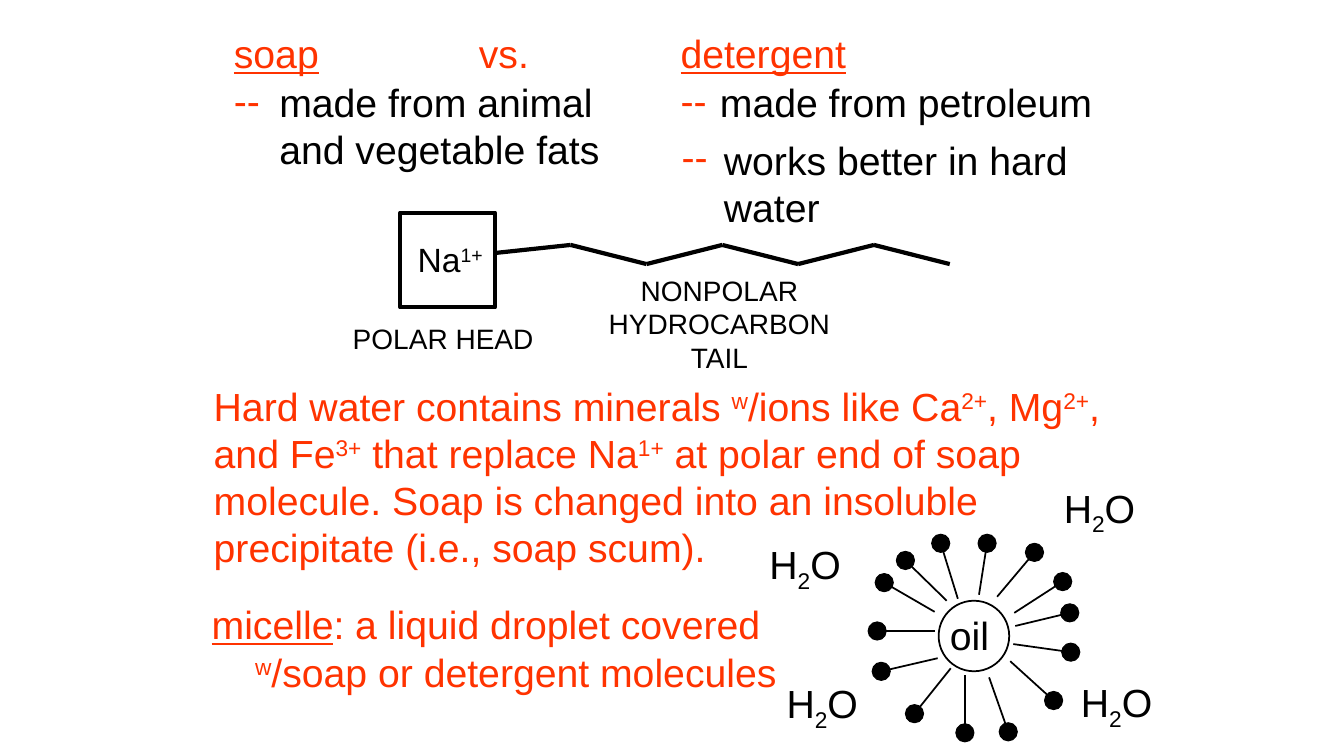
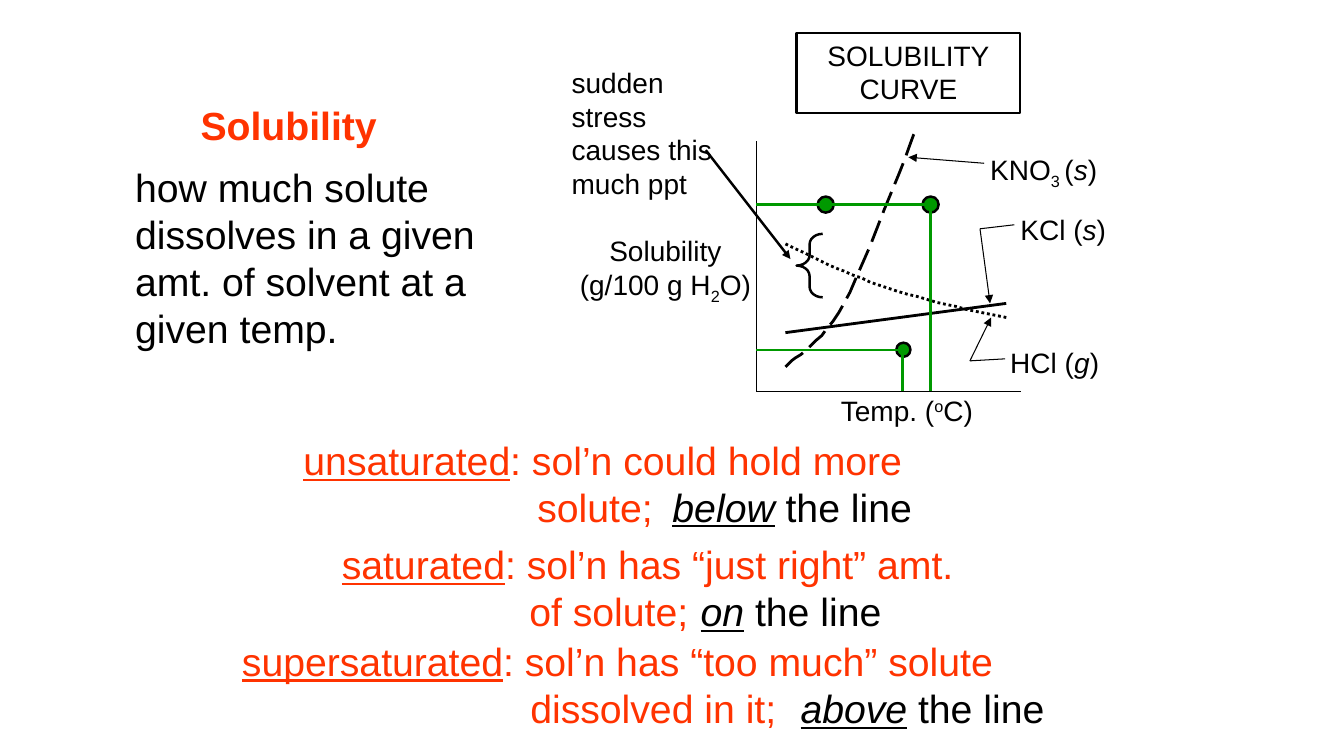
from itertools import pairwise

from lxml import etree
from pptx import Presentation
from pptx import util as u
from pptx.dml.color import RGBColor
from pptx.enum import dml, shapes, text
from pptx.oxml.ns import qn

# Shared look; all lengths are px, 100 to the inch
PX = 9144
SIZE = 1333, 750
FONT = "Arial"
RED, BLACK, WHITE, GREEN = "FF3300", "000000", "FFFFFF", "009900"
BIG, MEDIUM, SMALL = 28, 24, 20
LEFT, CENTER = text.PP_ALIGN.LEFT, text.PP_ALIGN.CENTER
BASELINES = {"^": "30000", "_": "-25000"}

# A run is plain text or (text, marks): ^ raised, _ lowered, u underlined, i italic
WATER = ["H", ("2", "_"), "O"]

# Slide 1: (x, y, width, colour, lines)
SOAP_TEXTS = [
    (232, 29, 120, RED, [[("soap", "u")]]),
    (475, 29, 80, RED, ["vs."]),
    (675, 29, 190, RED, [[("detergent", "u")]]),
    (232, 76, 40, RED, ["--"]),
    (675, 76, 40, RED, ["--"]),
    (676, 131, 40, RED, ["--"]),
    (277, 78, 349, BLACK, ["made from animal", "and vegetable fats"]),
    (714, 78, 401, BLACK, ["made from petroleum"]),
    (718, 135, 362, BLACK, ["works better in hard", "water"]),
    (212, 379, 914, RED, [
        ["Hard water contains minerals ", ("w", "^"), "/ions like Ca", ("2+", "^"),
         ", Mg", ("2+", "^"), ","],
        ["and Fe", ("3+", "^"), " that replace Na", ("1+", "^"), " at polar end of soap"],
        "molecule. Soap is changed into an insoluble",
        "precipitate (i.e., soap scum).",
    ]),
]
MICELLE = [[("micelle", "u"), ": a liquid droplet covered"],
           [("w", "^"), "/soap or detergent molecules"]]
HEAD_BOX = 397, 211, 94, 94
TAIL_START, TAIL_X, TAIL_STEP, TAIL_KINKS = (491, 251), 566, 75.2, 6
TAIL_HIGH, TAIL_LOW = 243, 262
MOLECULE_LABELS = [  # x, y, width, size, lines
    (583, 271, 261, SMALL, ["NONPOLAR", "HYDROCARBON", "TAIL"]),
    (320, 319, 239, SMALL, ["POLAR HEAD"]),
    (401, 237, 91, MEDIUM, [["Na", ("1+", "^")]]),
]
OIL = 931, 596, 70, 70
OIL_LABEL = 932, 606, 59
WATER_SPOTS = [(752, 536), (1044, 480), (769, 674), (1061, 673)]
KNOB = 18
SOAP_MOLECULES = [  # knob x, y, tail end x, y
    (979, 539, 971, 590), (933, 539, 950, 594), (1026, 548, 989, 592),
    (877, 578, 927, 607), (870, 626, 927, 626), (1045, 695, 1002, 656),
    (898, 556, 939, 596), (874, 666, 930, 653), (907, 708, 943, 663),
    (957, 727, 957, 670), (1000, 726, 981, 672), (1062, 647, 1005, 639),
    (1054, 577, 1006, 608), (1061, 608, 1007, 621),
]

# Slide 2: definitions as (x, y, indent of the second line, term, first, second)
DEFINITIONS = [
    (301, 433, 232, "unsaturated", ": sol’n could hold more", "solute;"),
    (339, 536, 186, "saturated", ": sol’n has “just right” amt.", "of solute;"),
    (240, 632, 286, "supersaturated", ": sol’n has “too much” solute", "dissolved in it;"),
]
PLACES = [(667, 479, "below"), (695, 583, "on"), (794, 679, "above")]
MEANING = ["how much solute", "dissolves in a given", "amt. of solvent at a", "given temp."]
STRESS_NOTE = ["sudden", "stress", "causes this", "much ppt"]
CHART_LABELS = [  # x, y, width, alignment, lines
    (834, 390, 160, LEFT, [["Temp. (", ("o", "^"), "C)"]]),
    (561, 232, 198, CENTER, ["Solubility", ["(g/100 g H", ("2", "_"), "O)"]]),
    (982, 151, 150, LEFT, [["KNO", ("3 ", "_"), "(", ("s", "i"), ")"]]),
    (1012, 211, 120, LEFT, [["KCl (", ("s", "i"), ")"]]),
    (1002, 343, 120, LEFT, [["HCl (", ("g", "i"), ")"]]),
    (567, 65, 160, LEFT, STRESS_NOTE),
]
CHART_TITLE = (790, 33, 222, 79), ["SOLUBILITY", "CURVE"]
AXES = [(750, 140), (750, 388), (1013, 388)]
KCL_LINE = [(779, 330), (998, 301)]
KNO3_CURVE = [(779, 364), (789, 353), (816, 341), (837, 301),
              (859, 261), (898, 152), (910, 126)]
HCL_CURVE = [(779, 242), (812, 258), (845, 274), (881, 286),
             (918, 298), (958, 307), (998, 315)]
LEADERS = [
    [(997, 356), (962, 358), (983, 315)],
    [(1006, 223), (972, 227), (982, 301)],
    [(976, 162), (901, 156)],
]
GUIDES = [[(895, 388), (895, 347), (750, 347)], [(923, 388), (923, 203), (750, 203)]]
SAMPLE_POINTS = [(923, 203, 16), (896, 347, 14), (819, 203, 16)]
STRESS_ARROW = [(700, 149), (784, 257)]
BRACE = 790, 232, 26, 63


def emu(*lengths):
    return [round(v * PX) for v in lengths]


def color(hex_code):
    return RGBColor.from_string(hex_code)


def write(frame, lines, size, hex_code, align=LEFT, indent=0):
    """Fill a frame with one paragraph a line; indent moves all but the first."""
    frame.word_wrap = True
    frame.vertical_anchor = text.MSO_ANCHOR.TOP
    frame.margin_left = frame.margin_right = frame.margin_top = frame.margin_bottom = 0
    for i, line in enumerate(lines):
        para = frame.add_paragraph() if i else frame.paragraphs[0]
        para.alignment = align
        para.font.name, para.font.size = FONT, u.Pt(size)
        para.font.color.rgb = color(hex_code)
        if i and indent:
            para._p.get_or_add_pPr().set("marL", str(indent * PX))
        for part in [line] if isinstance(line, str) else line:
            words, marks = (part, "") if isinstance(part, str) else part
            run = para.add_run()
            run.text = words
            if "u" in marks:
                run.font.underline = True
            if "i" in marks:
                run.font.italic = True
            if marks in BASELINES:
                run._r.get_or_add_rPr().set("baseline", BASELINES[marks])


def add_text(slide, x, y, width, lines, size=BIG, hex_code=BLACK, align=LEFT, indent=0):
    height = len(lines) * size * 1.66
    frame = slide.shapes.add_textbox(*emu(x, y, width, height)).text_frame
    write(frame, lines, size, hex_code, align, indent)
    return frame


def add_outline(slide, kind, box, weight, fill=None):
    shape = slide.shapes.add_shape(kind, *emu(*box))
    shape.shadow.inherit = False
    if fill:
        shape.fill.solid()
        shape.fill.fore_color.rgb = color(fill)
    else:
        shape.fill.background()
    shape.line.color.rgb, shape.line.width = color(BLACK), u.Pt(weight)
    return shape


def add_dot(slide, x, y, size, weight, fill):
    box = x - size / 2, y - size / 2, size, size
    add_outline(slide, shapes.MSO_SHAPE.OVAL, box, weight, fill)


def add_lines(slide, points, weight, hex_code=BLACK, arrow=False):
    """Join the points with straight lines; an arrow sits on the last point."""
    for start, end in pairwise(points):
        link = slide.shapes.add_connector(shapes.MSO_CONNECTOR.STRAIGHT, *emu(*start, *end))
        link.line.color.rgb, link.line.width = color(hex_code), u.Pt(weight)
        etree.SubElement(link._element.spPr, qn("a:effectLst"))
    if arrow:
        etree.SubElement(link.line._get_or_add_ln(), qn("a:tailEnd"), type="triangle")


def add_curve(slide, controls, weight, dash, steps=12):
    """Draw chained cubic Bezier curves as an open outline."""
    points = [controls[0]]
    for i in range(0, len(controls) - 1, 3):
        for step in range(1, steps + 1):
            t = step / steps
            weights = (1 - t) ** 3, 3 * t * (1 - t) ** 2, 3 * t * t * (1 - t), t ** 3
            points.append(tuple(sum(w * p[axis] for w, p in zip(weights, controls[i:i + 4]))
                                for axis in (0, 1)))
    builder = slide.shapes.build_freeform(*points[0], scale=PX)
    builder.add_line_segments(points[1:], close=False)
    curve = builder.convert_to_shape()
    curve.shadow.inherit = False
    curve.fill.background()
    curve.line.color.rgb, curve.line.width = color(BLACK), u.Pt(weight)
    curve.line.dash_style = dash


def soap_slide(slide):
    for x, y, width, hex_code, lines in SOAP_TEXTS:
        add_text(slide, x, y, width, lines, hex_code=hex_code)
    add_text(slide, 210, 596, 600, MICELLE, hex_code=RED, indent=43)

    # Soap molecule: head and zigzag tail
    add_outline(slide, shapes.MSO_SHAPE.RECTANGLE, HEAD_BOX, 3, WHITE)
    kinks = [(TAIL_X + i * TAIL_STEP, TAIL_LOW if i % 2 else TAIL_HIGH)
             for i in range(TAIL_KINKS)]
    add_lines(slide, [TAIL_START] + kinks, 3)
    for x, y, width, size, lines in MOLECULE_LABELS:
        add_text(slide, x, y, width, lines, size, align=CENTER)

    # Micelle around the oil drop
    for x, y, end_x, end_y in SOAP_MOLECULES:
        add_dot(slide, x, y, KNOB, 0.75, BLACK)
        add_lines(slide, [(x, y), (end_x, end_y)], 1.25)
    add_outline(slide, shapes.MSO_SHAPE.OVAL, OIL, 1.25)
    add_text(slide, *OIL_LABEL, ["oil"], align=CENTER)
    for x, y in WATER_SPOTS:
        add_text(slide, x, y, 93, [WATER], align=CENTER)


def solubility_slide(slide):
    heading = add_text(slide, 199, 100, 206, ["Solubility"], hex_code=RED)
    heading.paragraphs[0].font.bold = True
    add_text(slide, 134, 162, 358, MEANING)

    # Solubility curves
    add_lines(slide, AXES, 0.75)
    add_lines(slide, KCL_LINE, 2)
    add_curve(slide, KNO3_CURVE, 2, dml.MSO_LINE.LONG_DASH)
    add_curve(slide, HCL_CURVE, 2, dml.MSO_LINE.ROUND_DOT)
    for leader in LEADERS:
        add_lines(slide, leader, 0.75, arrow=True)
    title_box, title_lines = CHART_TITLE
    title = add_outline(slide, shapes.MSO_SHAPE.RECTANGLE, title_box, 1.5, WHITE)
    write(title.text_frame, title_lines, SMALL, BLACK, CENTER)
    title.text_frame.margin_top = 5 * PX

    # Sample points and guides
    for x, y, size in SAMPLE_POINTS:
        add_dot(slide, x, y, size, 1.75, GREEN)
    for guide in GUIDES:
        add_lines(slide, guide, 1.75, GREEN)
    brace = add_outline(slide, shapes.MSO_SHAPE.LEFT_BRACE, BRACE, 1.75)
    brace.adjustments[0] = 0.4
    for x, y, width, align, lines in CHART_LABELS:
        add_text(slide, x, y, width, lines, SMALL, align=align)
    add_lines(slide, STRESS_ARROW, 1.75, arrow=True)

    # Definitions
    for x, y, indent, term, first, second in DEFINITIONS:
        add_text(slide, x, y, 767, [[(term, "u"), first], second], hex_code=RED, indent=indent)
    for x, y, place in PLACES:
        add_text(slide, x, y, 274, [[(place, "ui"), " the line"]])


def main():
    deck = Presentation()
    deck.slide_width, deck.slide_height = emu(*SIZE)
    for build in (soap_slide, solubility_slide):
        build(deck.slides.add_slide(deck.slide_layouts[6]))
    deck.save("out.pptx")


if __name__ == "__main__":
    main()
